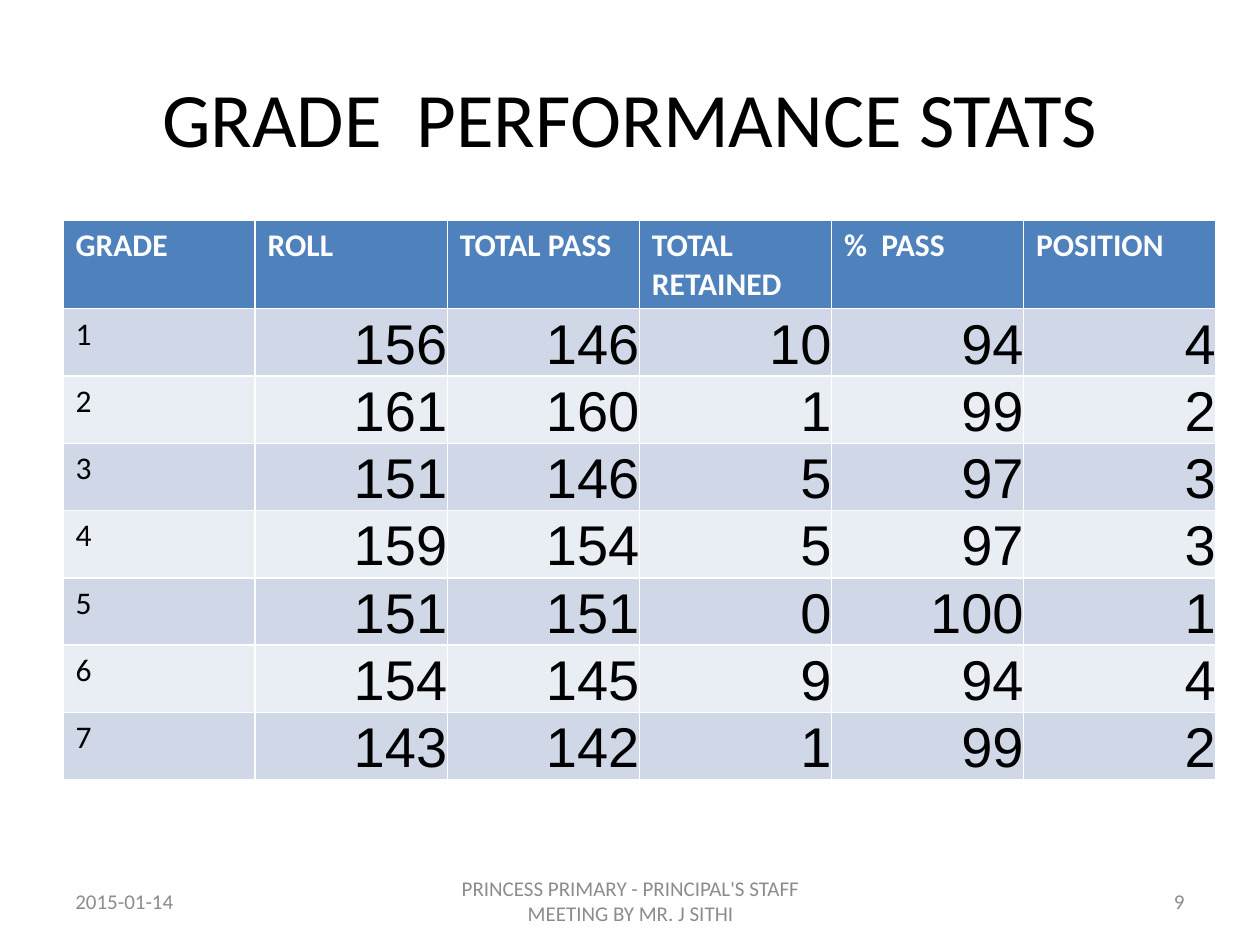
from pptx import Presentation
from pptx.dml.color import RGBColor
from pptx.enum.text import MSO_ANCHOR as Anchor, PP_ALIGN as Align
from pptx.util import Inches, Pt

BLACK = RGBColor(0x00, 0x00, 0x00)
WHITE = RGBColor(0xFF, 0xFF, 0xFF)
GRAY = RGBColor(0x8C, 0x8C, 0x8C)
HEADER_BLUE = RGBColor(0x4F, 0x81, 0xBD)
BAND_DARK = RGBColor(0xD0, 0xD8, 0xE8)
BAND_LIGHT = RGBColor(0xE9, 0xED, 0xF4)

HEADINGS = ["GRADE", "ROLL", "TOTAL PASS", "TOTAL RETAINED", "%  PASS", "POSITION"]
GRADES = [
    (1, 156, 146, 10, 94, 4),
    (2, 161, 160, 1, 99, 2),
    (3, 151, 146, 5, 97, 3),
    (4, 159, 154, 5, 97, 3),
    (5, 151, 151, 0, 100, 1),
    (6, 154, 145, 9, 94, 4),
    (7, 143, 142, 1, 99, 2),
]


def write_text(text_frame, text, size, color, align=Align.LEFT, font_name="Calibri", bold=False):
    paragraph = text_frame.paragraphs[0]
    paragraph.text = text
    paragraph.alignment = align
    font = paragraph.font
    font.name, font.size, font.bold = font_name, Pt(size), bold
    font.color.rgb = color


def add_text(left, top, width, height, text, size, color, align):
    box = slide.shapes.add_textbox(Inches(left), Inches(top), Inches(width), Inches(height))
    box.text_frame.word_wrap = True
    box.text_frame.vertical_anchor = Anchor.MIDDLE
    write_text(box.text_frame, text, size, color, align)


presentation = Presentation()
presentation.slide_width, presentation.slide_height = Inches(10), Inches(7.5)
slide = presentation.slides.add_slide(presentation.slide_layouts[6])

# Title
add_text(0.5, 0.3, 9, 1.25, "GRADE  PERFORMANCE STATS", 44, BLACK, Align.CENTER)

# Table; its style supplies the white cell borders
table = slide.shapes.add_table(
    len(GRADES) + 1, len(HEADINGS), Inches(0.5), Inches(1.75), Inches(9.15), Inches(3.95)
).table
table.rows[0].height = Inches(0.38)
for row_number in range(1, len(GRADES) + 1):
    table.rows[row_number].height = Inches(0.51)

# Heading row
for column, heading in enumerate(HEADINGS):
    cell = table.cell(0, column)
    cell.fill.solid()
    cell.fill.fore_color.rgb = HEADER_BLUE
    write_text(cell.text_frame, heading, 18, WHITE, bold=True)

# Grade rows, with large figures flush to the lower right
for row_number, values in enumerate(GRADES, start=1):
    for column, value in enumerate(values):
        cell = table.cell(row_number, column)
        cell.fill.solid()
        cell.fill.fore_color.rgb = BAND_DARK if row_number % 2 else BAND_LIGHT
        if column == 0:
            write_text(cell.text_frame, str(value), 18, BLACK)
        else:
            cell.margin_left = cell.margin_right = cell.margin_top = cell.margin_bottom = 0
            cell.vertical_anchor = Anchor.BOTTOM
            write_text(cell.text_frame, str(value), 32, BLACK, Align.RIGHT, "Arial")

# Footer
for left, width, text, align in [
    (0.5, 2.33, "2015-01-14", Align.LEFT),
    (3.42, 3.17, "PRINCESS PRIMARY - PRINCIPAL'S STAFF MEETING BY MR. J SITHI", Align.CENTER),
    (7.17, 2.33, "9", Align.RIGHT),
]:
    add_text(left, 6.95, width, 0.4, text, 12, GRAY, align)

presentation.save("out.pptx")
